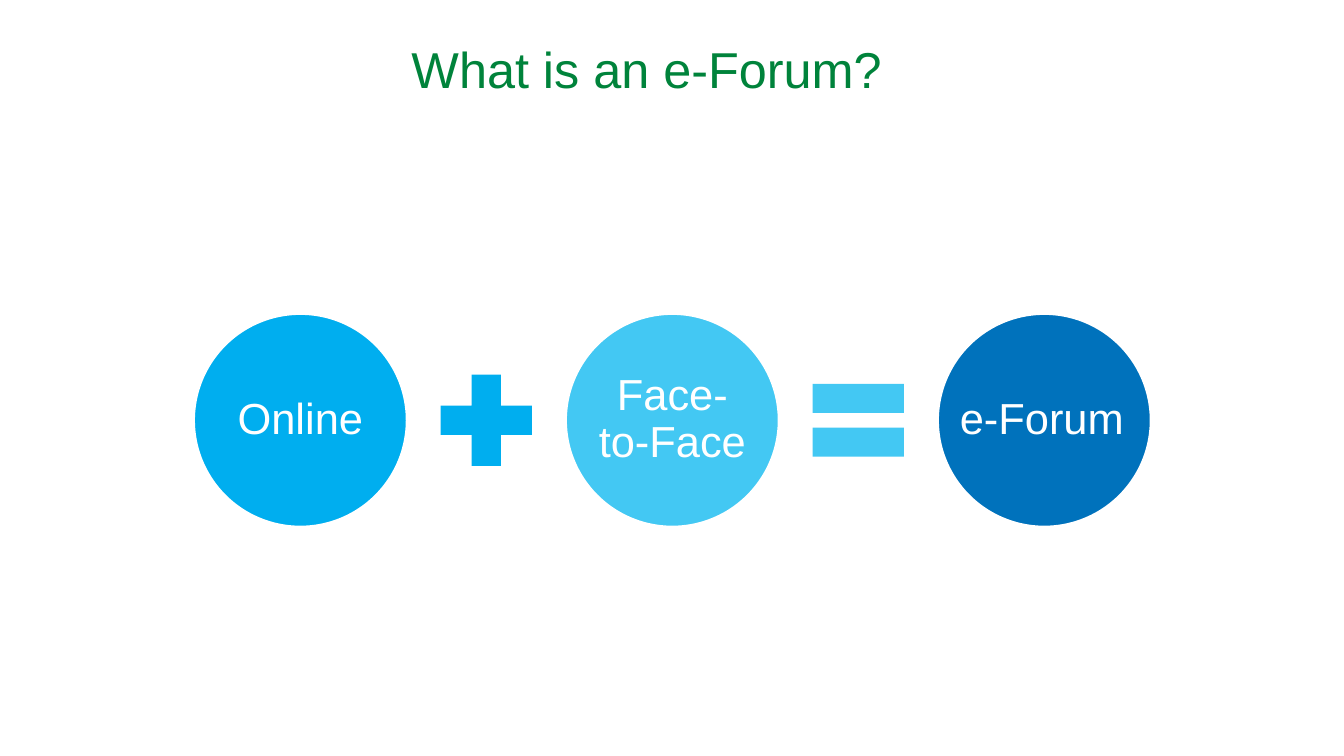
from pptx import Presentation
from pptx.dml.color import RGBColor
from pptx.enum import shapes, text
from pptx.util import Pt

COLOURS = {
    "title": "00833B",
    "online": "00AEEF",
    "face": "43C8F3",
    "forum": "0072BC",
    "white": "FFFFFF",
}
DIAMETER, OPERATOR, GAP = 152.6, 88.6, 12.25
LABEL_HEIGHT = 108

# Label, colour, label width, label shift, operator that follows with its adjustments
TERMS = [
    ("Online", "online", 108, 0, shapes.MSO_SHAPE.MATH_PLUS, [0.235]),
    ("Face-to-Face", "face", 117.4, 0, shapes.MSO_SHAPE.MATH_EQUAL, [0.235, 0.118]),
    ("e-Forum", "forum", 136, -1.8, None, []),
]


def colour(name):
    return RGBColor.from_string(COLOURS[name])


def add_label(parent, box, wording, size, ink, margins, anchor, spacing=None):
    frame = parent.add_textbox(*map(Pt, box)).text_frame
    frame_format = {
        "word_wrap": True,
        "vertical_anchor": anchor,
        "margin_left": Pt(margins[0]),
        "margin_right": Pt(margins[0]),
        "margin_top": Pt(margins[1]),
        "margin_bottom": Pt(margins[1]),
    }
    for key, value in frame_format.items():
        setattr(frame, key, value)
    line = frame.paragraphs[0]
    line.alignment = text.PP_ALIGN.CENTER
    line.line_spacing = spacing
    run = line.add_run()
    run.text = wording
    for key, value in {"name": "Arial", "size": Pt(size)}.items():
        setattr(run.font, key, value)
    run.font.color.rgb = colour(ink)


def add_figure(parent, kind, box, fill):
    figure = parent.add_shape(kind, *map(Pt, box))
    figure.shadow.inherit = False
    figure.fill.solid()
    figure.fill.fore_color.rgb = colour(fill)
    figure.line.fill.background()
    return figure


def add_title(slide, box):
    add_label(slide.shapes, box, "What is an e-Forum?", 36, "title",
              (7.2, 3.6), text.MSO_ANCHOR.TOP)


def add_equation(slide, left, top):
    equation = slide.shapes.add_group_shape().shapes
    middle = top + DIAMETER / 2
    pitch = DIAMETER + OPERATOR + 2 * GAP
    for index, (wording, fill, width, shift, operator, adjustments) in enumerate(TERMS):
        x = left + index * pitch

        # Circle with its label
        circle = add_figure(equation, shapes.MSO_SHAPE.OVAL,
                            (x, top, DIAMETER, DIAMETER), fill)
        circle.line.color.rgb = colour("white")
        circle.line.width = Pt(2)
        label_box = (x + (DIAMETER - width) / 2 + shift,
                     middle - LABEL_HEIGHT / 2, width, LABEL_HEIGHT)
        add_label(equation, label_box, wording, 31, "white",
                  (2.9, 2.9), text.MSO_ANCHOR.MIDDLE, 0.9)

        # Operator to the right of the circle
        if operator is not None:
            sign = add_figure(equation, operator,
                              (x + DIAMETER + GAP, middle - OPERATOR / 2,
                               OPERATOR, OPERATOR), fill)
            for position, value in enumerate(adjustments):
                sign.adjustments[position] = value


def main():
    deck = Presentation()
    deck.slide_width, deck.slide_height = Pt(960), Pt(540)
    slide = deck.slides.add_slide(deck.slide_layouts[6])
    add_title(slide, (156, 24, 612, 51))
    add_equation(slide, 138.25, 223.9)
    deck.save("out.pptx")


if __name__ == "__main__":
    main()
